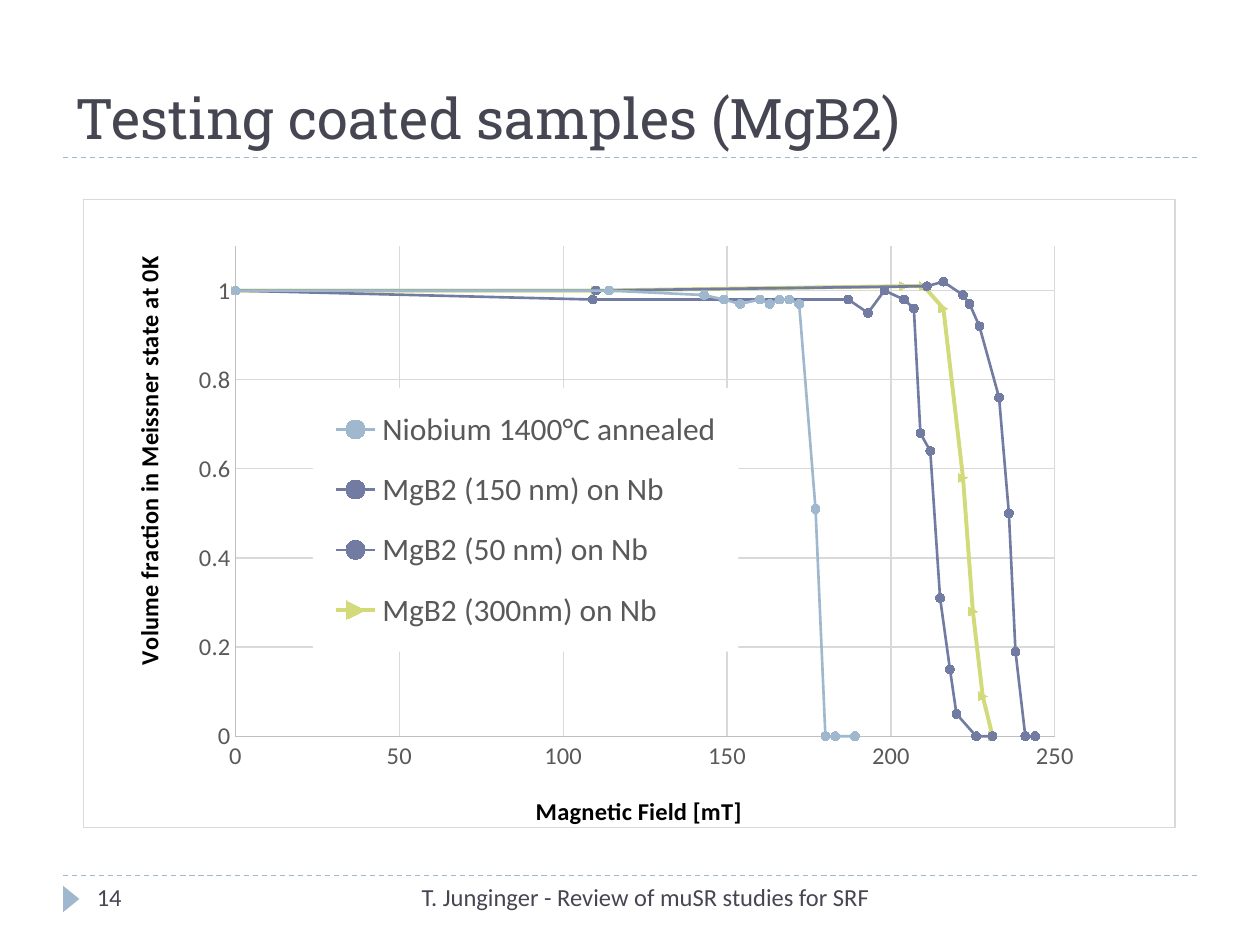
from lxml.etree import SubElement
from pptx import Presentation
from pptx.chart.data import XyChartData
from pptx.dml.color import RGBColor
from pptx.enum.chart import XL_CHART_TYPE, XL_LEGEND_POSITION, XL_MARKER_STYLE, XL_TICK_MARK
from pptx.enum.dml import MSO_LINE
from pptx.enum.shapes import MSO_CONNECTOR, MSO_SHAPE
from pptx.enum.text import MSO_ANCHOR, PP_ALIGN
from pptx.oxml import parse_xml
from pptx.oxml.ns import nsdecls, qn
from pptx.util import Inches, Pt

WHITE = RGBColor(0xFF, 0xFF, 0xFF)
BLACK = RGBColor(0, 0, 0)
SLATE = RGBColor(0x46, 0x46, 0x53)
LABEL_GREY = RGBColor(0x59, 0x59, 0x59)
AXIS_GREY = RGBColor(0xBF, 0xBF, 0xBF)
GRID_GREY = RGBColor(0xD9, 0xD9, 0xD9)
SKY = RGBColor(0x9F, 0xB8, 0xCD)
INDIGO = RGBColor(0x72, 0x7C, 0xA3)
LIME = RGBColor(0xD2, 0xDA, 0x7A)

MARGIN = 0.5
RIGHT_EDGE = 9.5
TITLE_RULE = 1.25
FOOTER_TOP = 6.95

CIRCLE = XL_MARKER_STYLE.CIRCLE
RIGHT_ARROW = XL_MARKER_STYLE.DOT

SAMPLES = [
    ("Niobium 1400°C annealed", SKY, 1.5, CIRCLE,
     [0, 114, 143, 149, 154, 160, 163, 166, 169, 172, 177, 180, 183, 189],
     [1, 1, 0.99, 0.98, 0.97, 0.98, 0.97, 0.98, 0.98, 0.97, 0.51, 0, 0, 0]),
    ("MgB2 (150 nm) on Nb", INDIGO, 1.5, CIRCLE,
     [0, 110, 211, 216, 222, 224, 227, 233, 236, 238, 241, 244],
     [1, 1, 1.01, 1.02, 0.99, 0.97, 0.92, 0.76, 0.5, 0.19, 0, 0]),
    ("MgB2 (50 nm) on Nb", INDIGO, 1.5, CIRCLE,
     [0, 109, 187, 193, 198, 204, 207, 209, 212, 215, 218, 220, 226, 231],
     [1, 0.98, 0.98, 0.95, 1, 0.98, 0.96, 0.68, 0.64, 0.31, 0.15, 0.05, 0, 0]),
    ("MgB2 (300nm) on Nb", LIME, 2.25, RIGHT_ARROW,
     [0, 110, 204, 210, 216, 222, 225, 228, 231],
     [1, 1, 1.01, 1.01, 0.96, 0.58, 0.28, 0.09, 0]),
]


def style_font(font, size, color, name="Calibri", bold=False):
    font.size = Pt(size)
    font.name = name
    font.bold = bold
    font.color.rgb = color


def style_line(line, color, width=0.75):
    line.color.rgb = color
    line.width = Pt(width)


def add_title(slide, wording):
    title = slide.shapes.title
    title.left, title.top = Inches(MARGIN), Inches(0.25)
    title.width, title.height = Inches(RIGHT_EDGE - MARGIN), Inches(1)
    title.text_frame.vertical_anchor = MSO_ANCHOR.BOTTOM
    paragraph = title.text_frame.paragraphs[0]
    paragraph.alignment = PP_ALIGN.LEFT
    run = paragraph.add_run()
    run.text = wording
    style_font(run.font, 32, SLATE, "Roboto Slab")


def add_rule(slide, height):
    rule = slide.shapes.add_connector(MSO_CONNECTOR.STRAIGHT, Inches(MARGIN), Inches(height),
                                      Inches(RIGHT_EDGE), Inches(height))
    style_line(rule.line, SKY)
    rule.line.dash_style = MSO_LINE.DASH
    SubElement(rule._element.spPr, qn("a:effectLst"))


def add_page_arrow(slide):
    arrow = slide.shapes.add_shape(MSO_SHAPE.ISOSCELES_TRIANGLE, Inches(0.46), Inches(7.07),
                                   Inches(0.21), Inches(0.13))
    arrow.rotation = 90
    arrow.shadow.inherit = False
    arrow.fill.solid()
    arrow.fill.fore_color.rgb = SKY
    arrow.line.fill.background()


def add_footer_text(slide, wording, left, width, alignment):
    footer = slide.shapes.add_textbox(Inches(left), Inches(FOOTER_TOP), Inches(width), Inches(0.4))
    footer.text_frame.word_wrap = True
    paragraph = footer.text_frame.paragraphs[0]
    paragraph.alignment = alignment
    run = paragraph.add_run()
    run.text = wording
    style_font(run.font, 14, SLATE)


def place(element, position, **shares):
    for old in element.findall(qn("c:layout")):
        element.remove(old)
    layout = parse_xml(f"<c:layout {nsdecls('c')}><c:manualLayout/></c:layout>")
    manual = layout[0]
    if "w" in shares:
        if position == 0:
            SubElement(manual, qn("c:layoutTarget")).set("val", "inner")
    for side in ("x", "y"):
        SubElement(manual, qn(f"c:{side}Mode")).set("val", "edge")
    for side, share in shares.items():
        SubElement(manual, qn(f"c:{side}")).set("val", str(share))
    element.insert(position, layout)


def add_backdrop(predecessor, line_xml):
    predecessor.addnext(parse_xml(
        f"<c:spPr {nsdecls('c', 'a')}><a:solidFill><a:srgbClr val='{WHITE}'/></a:solidFill>"
        f"{line_xml}</c:spPr>"))


def style_axis(axis, caption, maximum, step, caption_x, caption_y):
    axis.minimum_scale, axis.maximum_scale, axis.major_unit = 0, maximum, step
    axis.major_tick_mark = axis.minor_tick_mark = XL_TICK_MARK.NONE
    axis.has_major_gridlines = True
    style_line(axis.major_gridlines.format.line, GRID_GREY)
    style_line(axis.format.line, AXIS_GREY)
    style_font(axis.tick_labels.font, 14, LABEL_GREY)
    axis.tick_labels.number_format = "General"
    axis.tick_labels.number_format_is_linked = False
    run = axis.axis_title.text_frame.paragraphs[0].add_run()
    run.text = caption
    style_font(run.font, 14, BLACK, bold=True)
    place(axis.axis_title._element, 1, x=caption_x, y=caption_y)


def style_series(series, color, width, marker_style):
    series.smooth = True
    style_line(series.format.line, color, width)
    series.marker.style = marker_style
    series.marker.size = 5
    series.marker.format.fill.solid()
    series.marker.format.fill.fore_color.rgb = color
    style_line(series.marker.format.line, color)


def add_legend(chart):
    chart.has_legend = True
    legend = chart.legend
    legend.position = XL_LEGEND_POSITION.RIGHT
    legend.include_in_layout = True
    style_font(legend.font, 18, LABEL_GREY)
    place(legend._element, 1, x=0.21, y=0.3, w=0.39, h=0.42)
    add_backdrop(legend._element.find(qn("c:overlay")), "<a:ln><a:noFill/></a:ln>")


def add_field_chart(slide):
    data = XyChartData()
    for name, _, _, _, fields, fractions in SAMPLES:
        sample = data.add_series(name)
        for field, fraction in zip(fields, fractions):
            sample.add_data_point(field, fraction)
    chart = slide.shapes.add_chart(XL_CHART_TYPE.XY_SCATTER_SMOOTH, Inches(0.66), Inches(1.58),
                                   Inches(8.67), Inches(5.04), data).chart
    chart.has_title = False
    style_font(chart.font, 10, BLACK)
    chart.plots[0].vary_by_categories = False
    for series, (_, color, width, marker_style, _, _) in zip(chart.plots[0].series, SAMPLES):
        style_series(series, color, width, marker_style)
    style_axis(chart.category_axis, "Magnetic Field [mT]", 250, 50, 0.41, 0.94)
    style_axis(chart.value_axis, "Volume fraction in Meissner state at 0K", 1.1, 0.2, 0.04, 0.09)
    add_legend(chart)
    chart_part = chart._chartSpace.find(qn("c:chart"))
    place(chart_part.find(qn("c:plotArea")), 0, x=0.139, y=0.074, w=0.751, h=0.781)
    add_backdrop(chart_part, f"<a:ln w='{Pt(0.75)}'><a:solidFill><a:srgbClr val='{GRID_GREY}'/>"
                             "</a:solidFill></a:ln>")


def main():
    deck = Presentation()
    deck.slide_width, deck.slide_height = Inches(10), Inches(7.5)
    slide = deck.slides.add_slide(deck.slide_layouts[5])
    for height in (FOOTER_TOP, TITLE_RULE):
        add_rule(slide, height)
    add_page_arrow(slide)
    add_field_chart(slide)
    add_title(slide, "Testing coated samples (MgB2)")
    add_footer_text(slide, "T. Junginger - Review of muSR studies for SRF", 3.17, 3.83, PP_ALIGN.RIGHT)
    add_footer_text(slide, "14", 0.67, 2.17, PP_ALIGN.LEFT)
    deck.save("out.pptx")


if __name__ == "__main__":
    main()
